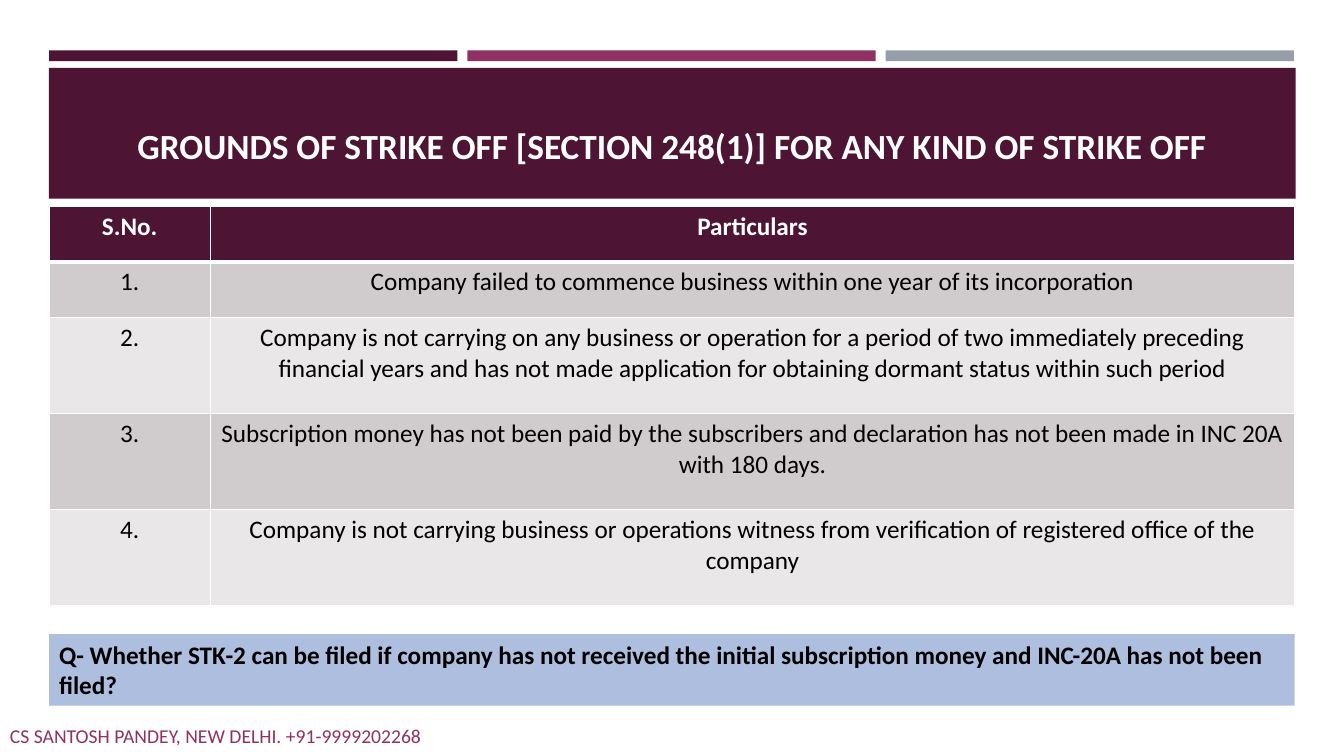
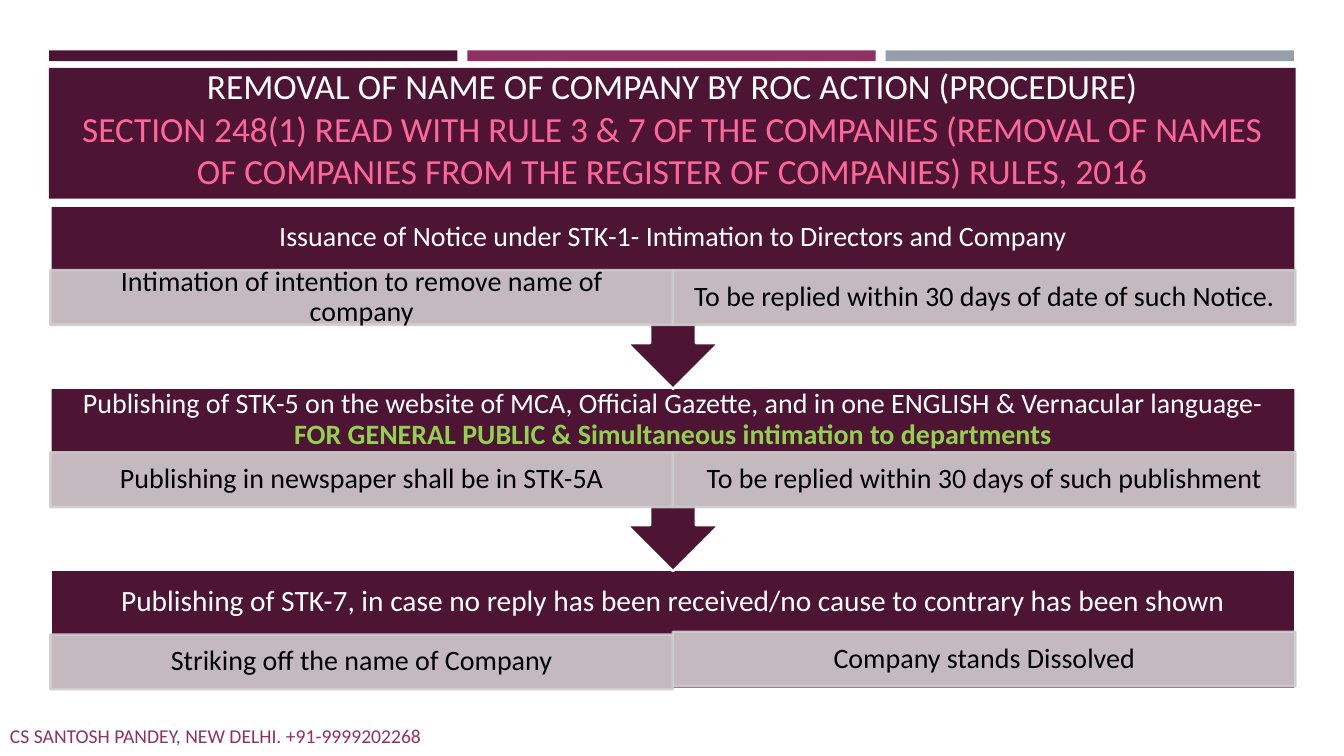
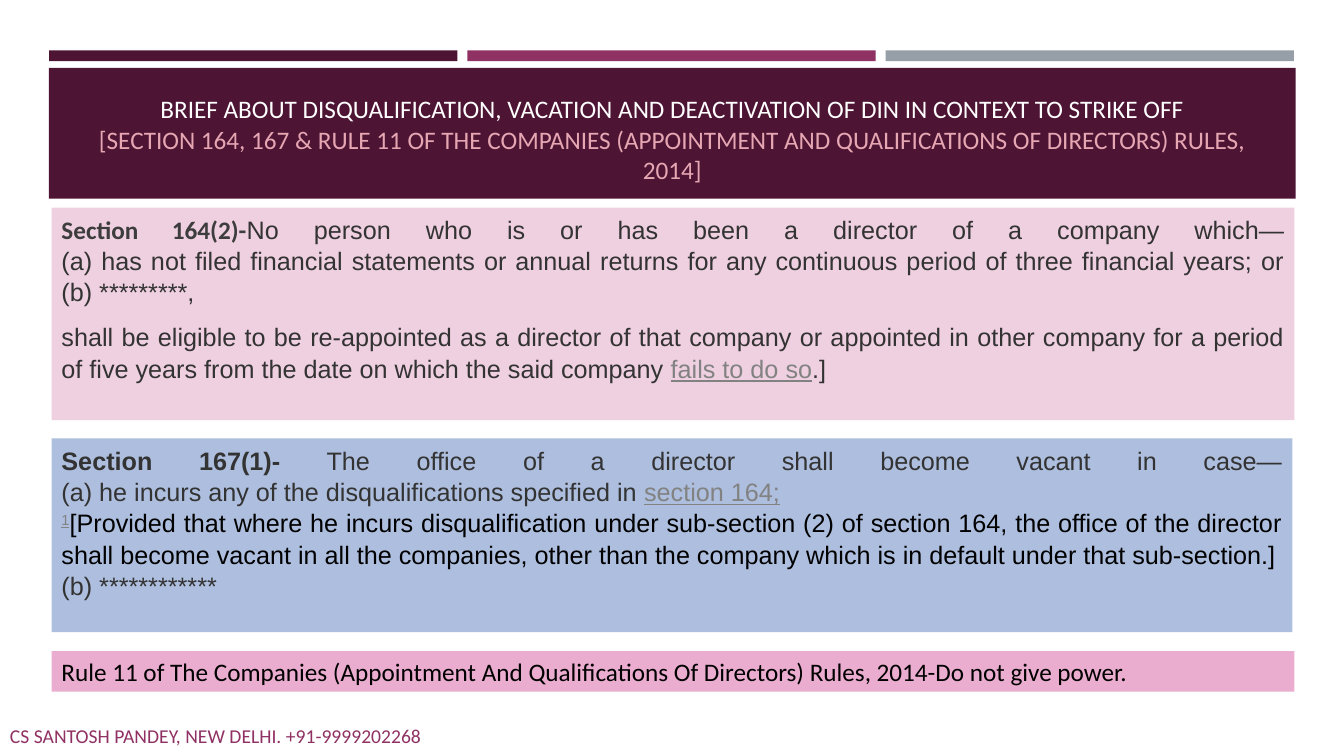
from pptx import Presentation
from pptx.dml.color import RGBColor
from pptx.enum.shapes import MSO_SHAPE
from pptx.enum.text import MSO_ANCHOR, MSO_AUTO_SIZE, PP_ALIGN
from pptx.oxml.ns import qn
from pptx.util import Cm, Pt
from lxml.etree import SubElement

PLUM, ROSE, STEEL = "4D1434", "903163", "969FA7"
WHITE, BLACK, DARK, GREY = "FFFFFF", "000000", "333333", "828282"
BLUE, PALE, PINK = "ADBEDE", "EFD0E0", "EAADCF"
ROWS = ("D0CCCE", "E9E7E8")
LEFT, WIDE = 1.24, 31.39
FOOT = "CS SANTOSH PANDEY, NEW DELHI. +91-9999202268"
LINK = {"underline": True}
BOLD = {"bold": True}

GROUNDS = [
    ("S.No.", "Particulars"),
    ("1.", "Company failed to commence business within one year of its incorporation"),
    ("2.", "Company is not carrying on any business or operation for a period of two immediately "
           "preceding financial years and has not made application for obtaining dormant status "
           "within such period"),
    ("3.", "Subscription money has not been paid by the subscribers and declaration has not been "
           "made in INC 20A with 180 days."),
    ("4.", "Company is not carrying business or operations witness from verification of "
           "registered office of the company"),
]

STAGES = [
    (20, [("Issuance of Notice under STK-1- Intimation to Directors and Company", WHITE)],
     ("Intimation of intention to remove name of company",
      "To be replied within 30 days of date of such Notice.")),
    (20, [("Publishing of STK-5 on the website of MCA, Official Gazette, and in one ENGLISH & "
           "Vernacular language- ", WHITE),
          ("FOR GENERAL PUBLIC & Simultaneous intimation to departments", "92D050", BOLD)],
     ("Publishing in newspaper shall be in STK-5A",
      "To be replied within 30 days of such publishment")),
    (21, [("Publishing of STK-7, in case no reply has been received/no cause to contrary has "
           "been shown", WHITE)],
     ("Striking off the name of Company", "Company stands Dissolved")),
]

ARIAL = {"name": "Arial"}
SEC164 = [
    [("Section 164(2)-", "3D3D3D", {"bold": True, "name": "Calibri"}),
     ("No person who is or has been a director of a company which—\n"
      "(a) has not filed financial statements or annual returns for any continuous period of "
      "three financial years; or\n(b) *********,", DARK)],
    [("shall be eligible to be re-appointed as a director of that company or appointed in other "
      "company for a period of five years from the date on which the said company ", DARK),
     ("fails to do so", GREY, LINK),
     (".]", DARK)],
]
SEC167 = [
    [("Section 167(1)-", DARK, BOLD),
     (" The office of a director shall become vacant in case—\n"
      "(a) he incurs any of the disqualifications specified in ", DARK),
     ("section 164;", GREY, LINK)],
    [("1", GREY, LINK, 30000),
     ("[Provided that where he incurs disqualification under sub-section (2) of section 164, "
      "the office of the director shall become vacant in all the companies, other than the "
      "company which is in default under that sub-section.]", BLACK)],
    [("(b) ************", DARK)],
]


def hue(code):
    return RGBColor.from_string(code)


def apply(item, form):
    for key, val in form.items():
        setattr(item, key, val)


def add_run(para, text, code, form, lift=None):
    for num, part in enumerate(text.split("\n")):
        if num:
            para.add_line_break()
        if not part:
            continue
        run = para.add_run()
        run.text = part
        apply(run.font, form)
        run.font.color.rgb = hue(code)
        if lift:
            run.font._element.set("baseline", str(lift))


def write(frame, paras, size, look=None, align=PP_ALIGN.LEFT, **gaps):
    base = {"name": "Calibri", "size": Pt(size), "bold": False, **(look or {})}
    for num, runs in enumerate(paras):
        para = frame.paragraphs[0] if num == 0 else frame.add_paragraph()
        apply(para, {"alignment": align, **gaps})
        for text, code, *more in runs:
            form = {**base, **(more[0] if more else {})}
            add_run(para, text, code, form, *more[1:])


def setup(frame, anchor=MSO_ANCHOR.TOP, side=0.25, edge=0.13):
    apply(frame, {
        "word_wrap": True, "auto_size": MSO_AUTO_SIZE.NONE, "vertical_anchor": anchor,
        "margin_left": Cm(side), "margin_right": Cm(side),
        "margin_top": Cm(edge), "margin_bottom": Cm(edge)})
    return frame


def add_box(slide, spot, fill, kind=MSO_SHAPE.RECTANGLE, line=None):
    box = slide.shapes.add_shape(kind, *map(Cm, spot))
    box.shadow.inherit = False
    box.fill.solid()
    box.fill.fore_color.rgb = hue(fill)
    if line:
        box.line.color.rgb = hue(line)
        box.line.width = Pt(1.75)
    else:
        box.line.fill.background()
    return box


def add_text(slide, spot, **form):
    return setup(slide.shapes.add_textbox(*map(Cm, spot)).text_frame, **form)


def fade(box, share):
    for tone in list(box.element.spPr.iter(qn("a:srgbClr"))):
        SubElement(tone, qn("a:alpha")).set("val", str(share * 1000))


def add_bands(slide, layout):
    for mark in list(layout.placeholders)[1:]:
        mark.element.getparent().remove(mark.element)
    bands = [add_box(slide, (LEFT + 10.54 * num, 1.27, 10.29, 0.27), code)
             for num, code in enumerate((PLUM, ROSE, STEEL))]
    bands.append(add_box(slide, (1.23, 1.71, 31.42, 3.3), PLUM))
    for band in bands:
        layout.shapes.element.insert(2, band.element)


def add_slide(deck, top, high, size, runs, look=None):
    slide = deck.slides.add_slide(deck.slide_layouts[5])
    title = slide.shapes.title
    apply(title, {"left": Cm(1.63), "top": Cm(top), "width": Cm(30.63), "height": Cm(high)})
    write(setup(title.text_frame, MSO_ANCHOR.BOTTOM), [runs], size, look, PP_ALIGN.CENTER)
    foot = add_text(slide, (0, 18.03, 19.2, 1.02), anchor=MSO_ANCHOR.MIDDLE)
    write(foot, [[(FOOT, ROSE)]], 14)
    return slide


def edge_cell(cell, low):
    props = cell._tc.get_or_add_tcPr()
    for num, side in enumerate(("lnL", "lnR", "lnT", "lnB")):
        line = props.makeelement(qn("a:" + side), {"w": str(Pt(low if side == "lnB" else 1))})
        SubElement(SubElement(line, qn("a:solidFill")), qn("a:srgbClr")).set("val", WHITE)
        props.insert(num, line)


def add_grid(slide, rows):
    highs = [1.4, 1.4, 2.42, 2.42, 2.42]
    spot = (LEFT, 5.2, WIDE, sum(highs))
    table = slide.shapes.add_table(len(rows), 2, *map(Cm, spot)).table
    for col, wide in zip(table.columns, (4.06, 27.33)):
        col.width = Cm(wide)
    for num, (row, high) in enumerate(zip(table.rows, highs)):
        row.height = Cm(high)
        head = num == 0
        for cell, text in zip(row.cells, rows[num]):
            cell.fill.solid()
            cell.fill.fore_color.rgb = hue(PLUM if head else ROWS[(num - 1) % 2])
            edge_cell(cell, 3 if head else 1)
            write(cell.text_frame, [[(text, WHITE if head else BLACK)]], 18,
                  {"bold": head}, PP_ALIGN.CENTER)


def add_stage(slide, num, size, runs, notes):
    left, wide, top = 1.27, 31.38, 5.18 + 4.59 * num
    last = num == len(STAGES) - 1
    kind = MSO_SHAPE.RECTANGLE if last else MSO_SHAPE.UP_ARROW_CALLOUT
    body = add_box(slide, (left, top, wide, 3.02 if last else 4.62), PLUM, kind, WHITE)
    body.rotation = 0 if last else 180
    head = add_text(slide, (left, top, wide, 1.63),
                    anchor=MSO_ANCHOR.MIDDLE, side=0.41, edge=0.41)
    write(head, [runs], size, None, PP_ALIGN.CENTER, line_spacing=0.9)
    for col, text in enumerate(notes):
        rise = 0.07 if last and col else 0
        spot = (left + col * wide / 2, top + 1.63 - rise, wide / 2, 1.38)
        note = add_box(slide, spot, ROWS[0], line=ROWS[0])
        fade(note, 90)
        write(setup(note.text_frame, MSO_ANCHOR.MIDDLE, 0.41, 0.08), [[(text, BLACK)]], 20,
              None, PP_ALIGN.CENTER, line_spacing=0.9)


def add_panel(slide, spot, fill, paras, look=None, **form):
    box = add_box(slide, spot, fill)
    write(setup(box.text_frame), paras, 18, look, **form)


def main():
    deck = Presentation()
    apply(deck, {"slide_width": Cm(33.87), "slide_height": Cm(19.05)})

    slide = add_slide(deck, 2.18, 2.16, 25.2, [
        ("GROUNDS OF STRIKE OFF [SECTION 248(1)] FOR ANY KIND OF STRIKE OFF", WHITE)], BOLD)
    add_bands(slide, deck.slide_layouts[5])
    add_grid(slide, GROUNDS)
    add_panel(slide, (LEFT, 15.98, WIDE, 1.8), BLUE, [[
        ("Q- Whether STK-2 can be filed if company has not received the initial subscription "
         "money and INC-20A has not been filed?", BLACK)]], BOLD)

    slide = add_slide(deck, 1.71, 3.25, 25.2, [
        ("REMOVAL OF NAME OF COMPANY BY ROC ACTION (PROCEDURE)\n", WHITE),
        ("SECTION 248(1) READ WITH RULE 3 & 7 OF THE COMPANIES (REMOVAL OF NAMES OF COMPANIES "
         "FROM THE REGISTER OF COMPANIES) RULES, 2016", "FF6699")])
    for num, stage in reversed(list(enumerate(STAGES))):
        add_stage(slide, num, *stage)

    slide = add_slide(deck, 1.96, 2.82, 18, [
        ("BRIEF ABOUT DISQUALIFICATION, VACATION AND DEACTIVATION OF DIN IN CONTEXT TO STRIKE "
         "OFF\n", WHITE),
        ("[SECTION 164, 167 & RULE 11 OF THE COMPANIES (APPOINTMENT AND QUALIFICATIONS OF "
         "DIRECTORS) RULES, 2014]", "E6A7B3")])
    add_panel(slide, (1.3, 5.23, 31.32, 5.36), PALE, SEC164, ARIAL, align=PP_ALIGN.JUSTIFY,
              line_spacing=1.04, space_before=Pt(3.6), space_after=Pt(6))
    add_panel(slide, (1.3, 11.05, 31.27, 4.88), BLUE, SEC167, ARIAL, align=PP_ALIGN.JUSTIFY,
              line_spacing=1.04)
    add_panel(slide, (1.3, 16.41, 31.32, 1.02), PINK, [[
        ("Rule 11 of The Companies (Appointment And Qualifications Of Directors) Rules, 2014-Do "
         "not give power.", BLACK)]])

    deck.save("out.pptx")


if __name__ == "__main__":
    main()
